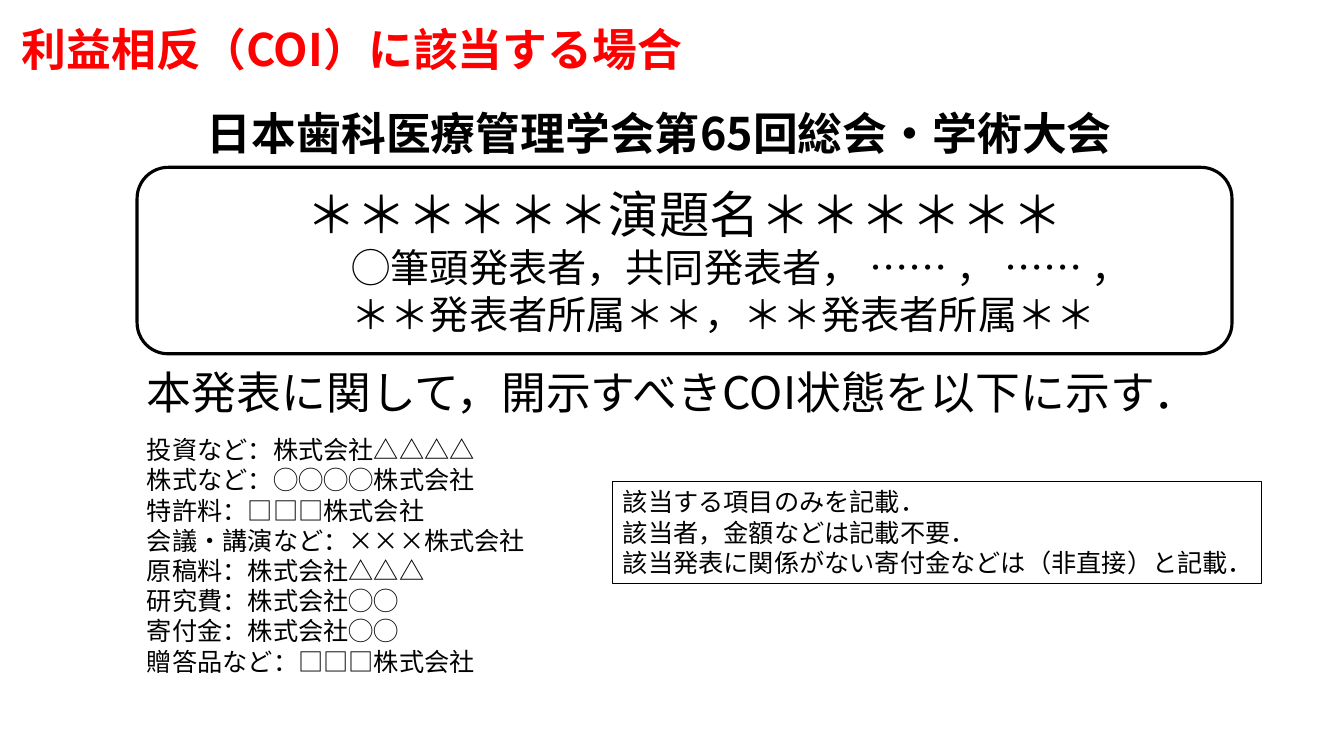
from dataclasses import dataclass
from typing import Optional

from lxml.etree import SubElement
from pptx import Presentation
from pptx.dml.color import RGBColor
from pptx.enum.shapes import MSO_SHAPE
from pptx.enum.text import MSO_ANCHOR, PP_ALIGN
from pptx.oxml.ns import qn
from pptx.slide import Slide
from pptx.text.text import TextFrame
from pptx.util import Inches, Pt

FONT = "Noto Sans CJK JP"
BLACK = RGBColor(0x00, 0x00, 0x00)
RED = RGBColor(0xFF, 0x00, 0x00)


@dataclass
class Line:
    text: str
    size: int
    align: PP_ALIGN = PP_ALIGN.LEFT
    indent: float = 0
    bold: bool = False
    color: RGBColor = BLACK


@dataclass
class Block:
    left: float
    top: float
    width: float
    height: float
    lines: list[Line]
    outline: Optional[MSO_SHAPE] = None
    outline_width: float = 0
    anchor: MSO_ANCHOR = MSO_ANCHOR.TOP


def small_lines(*texts: str) -> list[Line]:
    return [Line(text, 18) for text in texts]


BLOCKS = [
    Block(1.36, 1.66, 10.86, 1.85, [
        Line("＊＊＊＊＊＊演題名＊＊＊＊＊＊", 36, PP_ALIGN.CENTER),
        Line("◯筆頭発表者，共同発表者， …… ， …… ，", 28, indent=1.94),
        Line("＊＊発表者所属＊＊，＊＊発表者所属＊＊", 28, indent=1.94),
    ], MSO_SHAPE.ROUNDED_RECTANGLE, 2.25, MSO_ANCHOR.MIDDLE),
    Block(1.36, 3.57, 10.86, 0.64,
          [Line("本発表に関して，開示すべきCOI状態を以下に示す．", 32)]),
    Block(0.12, 0.17, 10.33, 0.64,
          [Line("利益相反（COI）に該当する場合", 32, bold=True, color=RED)]),
    Block(0.12, 1, 12.84, 0.64,
          [Line("日本歯科医療管理学会第65回総会・学術大会", 32, PP_ALIGN.CENTER, bold=True)]),
    Block(1.36, 4.26, 10.86, 2.52, small_lines(
        "投資など：株式会社△△△△",
        "株式など：◯◯◯◯株式会社",
        "特許料：□□□株式会社",
        "会議・講演など：×××株式会社",
        "原稿料：株式会社△△△",
        "研究費：株式会社◯◯",
        "寄付金：株式会社◯◯",
        "贈答品など：□□□株式会社",
    )),
    Block(6.08, 4.78, 6.43, 1.01, small_lines(
        "該当する項目のみを記載．",
        "該当者，金額などは記載不要．",
        "該当発表に関係がない寄付金などは（非直接）と記載．",
    ), MSO_SHAPE.RECTANGLE, 0.75),
]


def write_lines(frame: TextFrame, lines: list[Line]) -> None:
    for index, line in enumerate(lines):
        para = frame.add_paragraph() if index else frame.paragraphs[0]
        para.text = line.text
        para.alignment = line.align
        properties = para._p.get_or_add_pPr()
        if line.indent:
            properties.set("marL", str(Inches(line.indent)))
        para.font.name = FONT
        para.font.size = Pt(line.size)
        para.font.bold = line.bold
        para.font.color.rgb = line.color
        east_asian = SubElement(properties.find(qn("a:defRPr")), qn("a:ea"))
        east_asian.set("typeface", FONT)


def add_block(page: Slide, block: Block) -> None:
    place = [Inches(n) for n in (block.left, block.top, block.width, block.height)]
    if block.outline is None:
        box = page.shapes.add_textbox(*place)
    else:
        box = page.shapes.add_shape(block.outline, *place)
        box.shadow.inherit = False
        box.fill.background()
        box.line.color.rgb = BLACK
        box.line.width = Pt(block.outline_width)
    box.text_frame.word_wrap = True
    box.text_frame.vertical_anchor = block.anchor
    write_lines(box.text_frame, block.lines)


def main() -> None:
    deck = Presentation()
    deck.slide_width, deck.slide_height = Inches(13.33), Inches(7.5)
    page = deck.slides.add_slide(deck.slide_layouts[6])
    for block in BLOCKS:
        add_block(page, block)
    deck.save("out.pptx")


if __name__ == "__main__":
    main()
